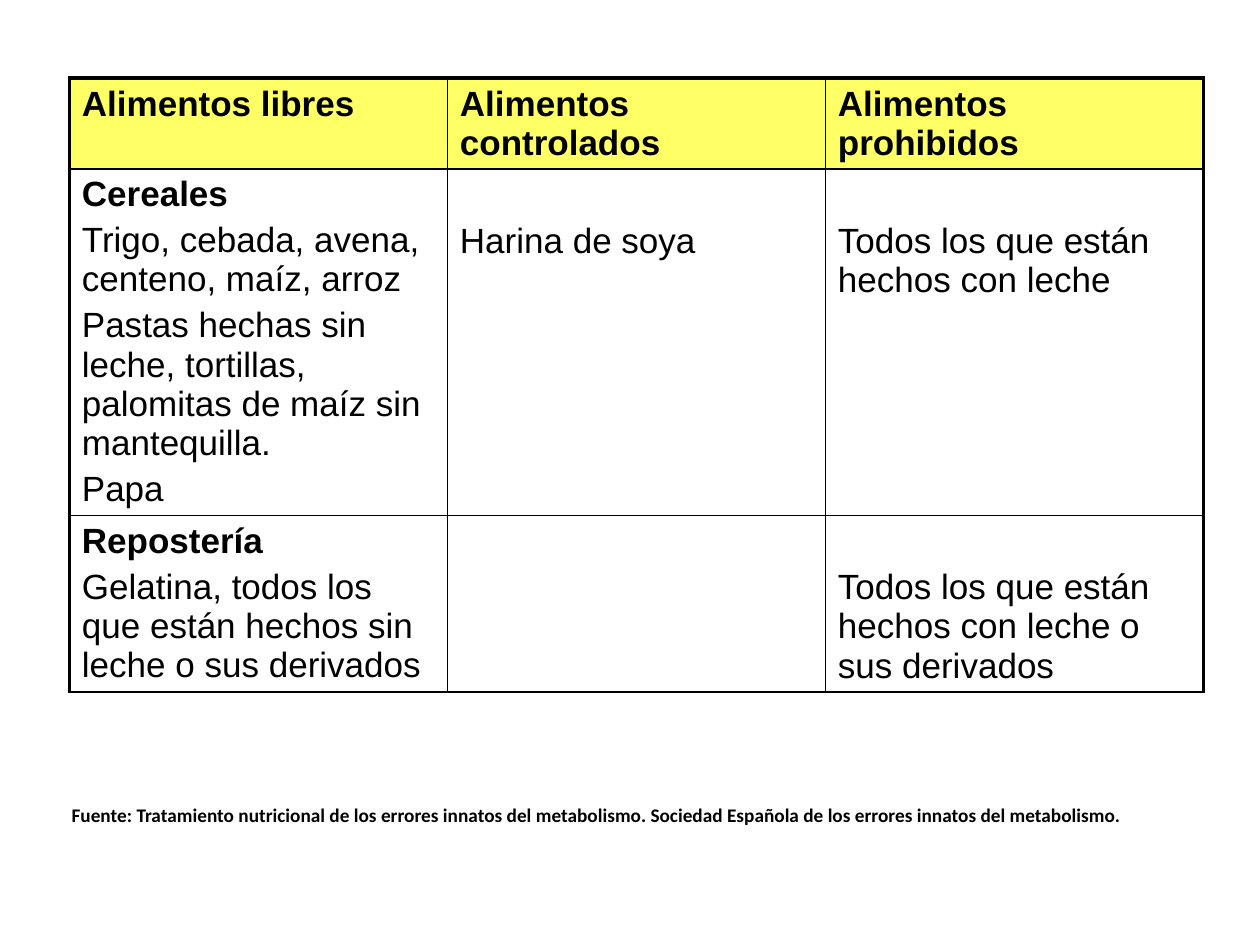
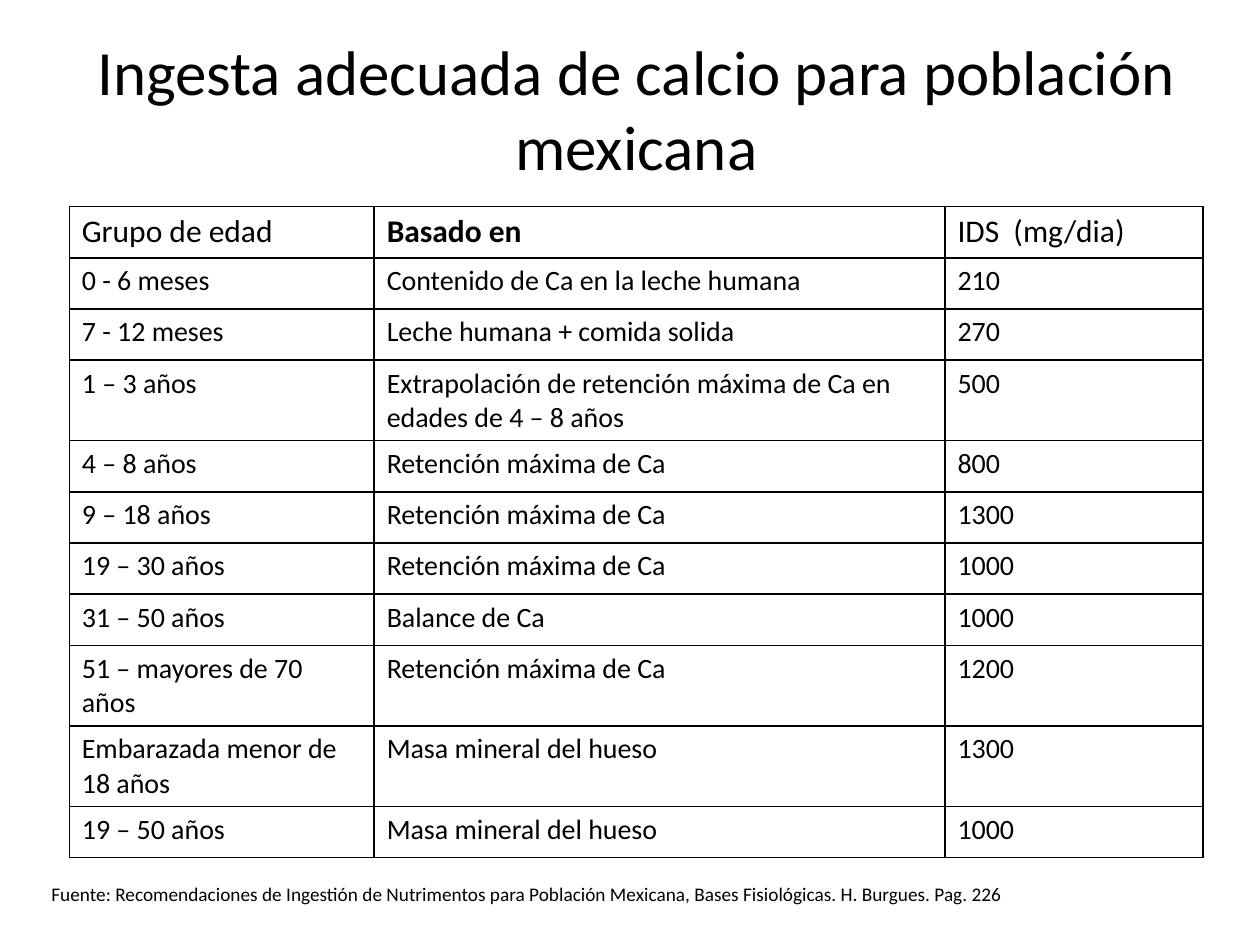
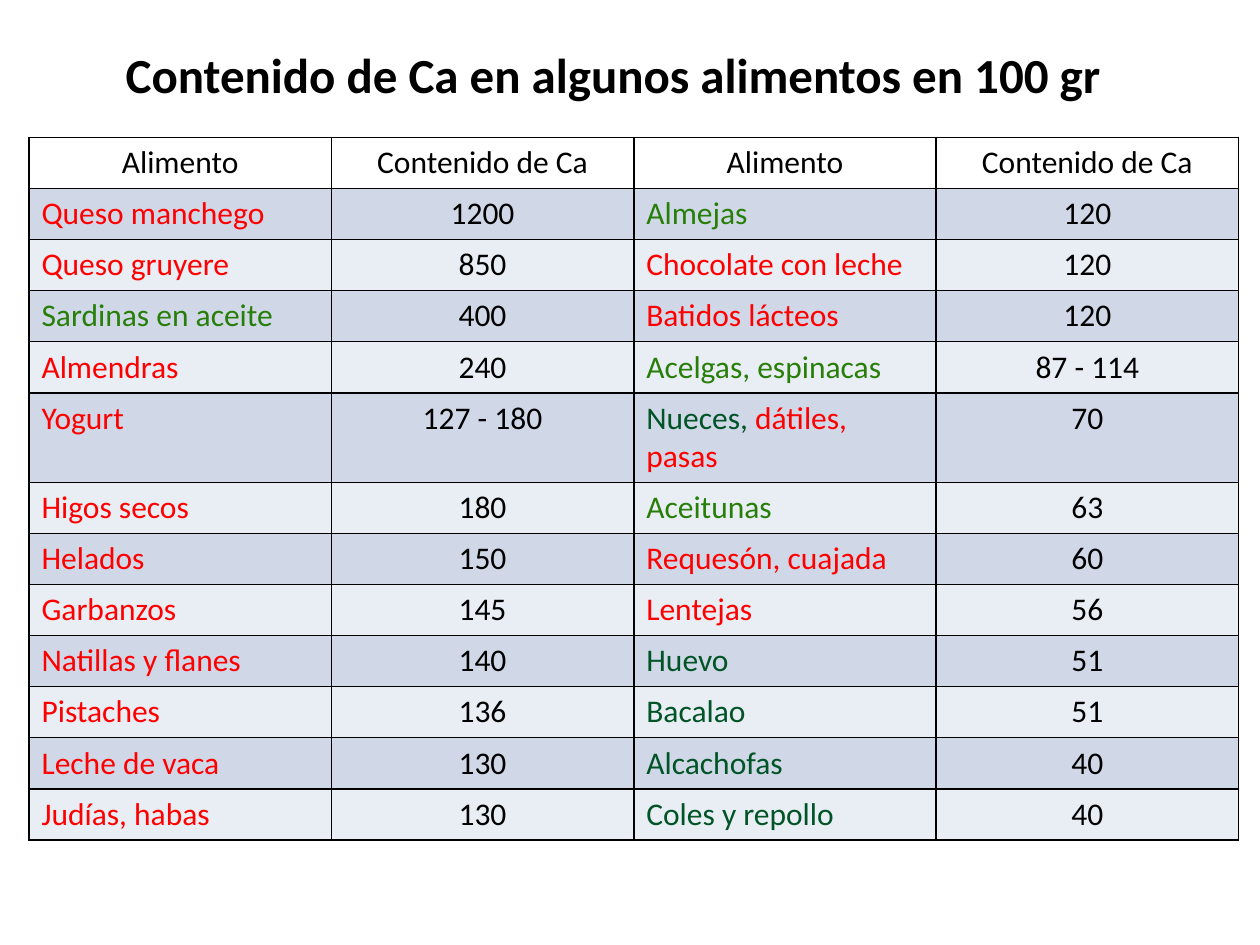
from dataclasses import dataclass, field, replace

from lxml import etree
from pptx import Presentation
from pptx.dml.color import RGBColor
from pptx.enum.text import MSO_ANCHOR, PP_ALIGN
from pptx.oxml.ns import qn
from pptx.util import Inches, Pt

LEFT, CENTER = PP_ALIGN.LEFT, PP_ALIGN.CENTER
TOP, MIDDLE = MSO_ANCHOR.TOP, MSO_ANCHOR.MIDDLE

BLACK = RGBColor(0x00, 0x00, 0x00)
WHITE = RGBColor(0xFF, 0xFF, 0xFF)
YELLOW = RGBColor(0xFF, 0xFF, 0x66)
RED = RGBColor(0xFF, 0x00, 0x00)
GREEN = RGBColor(0x27, 0x7E, 0x08)
DARK_GREEN = RGBColor(0x00, 0x54, 0x26)
BANDS = (RGBColor(0xD0, 0xD8, 0xE8), RGBColor(0xE9, 0xED, 0xF4))

THIN, THICK = Pt(1), Pt(2.25)
PARAGRAPH_GAP = Pt(4)
# Top margin that sets a cell's text level with the line under a category heading
BELOW_HEADING = Inches(0.42)


@dataclass(frozen=True)
class Style:
    size: float
    font: str = "Calibri"
    color: RGBColor = BLACK
    bold: bool = False


@dataclass(frozen=True)
class Span:
    text: str
    style: Style


@dataclass(frozen=True)
class Paragraph:
    spans: tuple[Span, ...]
    alignment: PP_ALIGN = LEFT


@dataclass(frozen=True)
class Cell:
    paragraphs: tuple[Paragraph, ...] = ()
    fill: RGBColor | None = None
    margin_top: int = Inches(0.05)


@dataclass(frozen=True)
class Box:
    left: float
    top: float
    width: float
    height: float

    def lengths(self) -> tuple[int, ...]:
        return tuple(map(Inches, (self.left, self.top, self.width, self.height)))


@dataclass(frozen=True)
class TableLayout:
    box: Box
    columns: tuple[float, ...]
    tall_rows: dict[int, float] = field(default_factory=dict)
    outer_lines: dict[str, int] = field(default_factory=dict)


TITLE = Style(36)
FOOTNOTE = Style(11)
HEADER = Style(18)
FOOD = Style(20, "Arial")
FOOD_BOLD = replace(FOOD, bold=True)
INTAKE = Style(16)


def line(text: str, style: Style, alignment: PP_ALIGN = LEFT) -> Paragraph:
    return Paragraph((Span(text, style),), alignment)


def write(frame, paragraphs: tuple[Paragraph, ...]) -> None:
    for index, content in enumerate(paragraphs):
        paragraph = frame.add_paragraph() if index else frame.paragraphs[0]
        paragraph.alignment = content.alignment
        if index:
            paragraph.space_before = PARAGRAPH_GAP
        for span in content.spans:
            run = paragraph.add_run()
            run.text = span.text
            style = span.style
            formats = {"name": style.font, "size": Pt(style.size), "bold": style.bold}
            for attribute, value in formats.items():
                setattr(run.font, attribute, value)
            run.font.color.rgb = style.color


def add_text(slide, box: Box, paragraph: Paragraph, anchor: MSO_ANCHOR = TOP) -> None:
    frame = slide.shapes.add_textbox(*box.lengths()).text_frame
    frame.word_wrap = True
    frame.vertical_anchor = anchor
    write(frame, (paragraph,))


def set_borders(cell, widths: dict[str, int]) -> None:
    """Put black lines, keyed L, R, T and B, ahead of the cell's fill."""
    properties = cell._tc.get_or_add_tcPr()
    for index, (side, width) in enumerate(widths.items()):
        border = etree.Element(qn(f"a:ln{side}"), w=str(width))
        fill = etree.SubElement(border, qn("a:solidFill"))
        etree.SubElement(fill, qn("a:srgbClr"), val=str(BLACK))
        properties.insert(index, border)


def add_grid(slide, layout: TableLayout, rows: list[list[Cell]]) -> None:
    """Draw a table whose ordinary rows share the height left by the tall ones."""
    last_row, last_column = len(rows) - 1, len(layout.columns) - 1
    table = slide.shapes.add_table(
        len(rows), len(layout.columns), *layout.box.lengths()).table
    table.first_row = table.horz_banding = False
    for column, width in zip(table.columns, layout.columns):
        column.width = Inches(width)
    tall = layout.tall_rows
    ordinary = (layout.box.height - sum(tall.values())) / (len(rows) - len(tall))

    for r, row in enumerate(rows):
        table.rows[r].height = Inches(tall.get(r, ordinary))
        for c, content in enumerate(row):
            cell = table.cell(r, c)
            cell.margin_top = content.margin_top
            if content.fill is None:
                cell.fill.background()
            else:
                cell.fill.solid()
                cell.fill.fore_color.rgb = content.fill
            write(cell.text_frame, content.paragraphs)
            on_edge = {"L": c == 0, "R": c == last_column,
                       "T": r == 0, "B": r == last_row}
            set_borders(cell, {
                side: layout.outer_lines.get(side, THIN) if outer else THIN
                for side, outer in on_edge.items()})


def food_category(name: str, free: list[str], controlled: str,
                  forbidden: str) -> list[Cell]:
    allowed = (line(name, FOOD_BOLD), *(line(text, FOOD) for text in free))
    return [Cell(allowed)] + [
        Cell((line(text, FOOD),), margin_top=BELOW_HEADING) if text else Cell()
        for text in (controlled, forbidden)]


def build_food_groups(slide) -> None:
    headings = ("Alimentos libres", "Alimentos controlados", "Alimentos prohibidos")
    rows = [
        [Cell((line(text, FOOD_BOLD),), YELLOW) for text in headings],
        food_category(
            "Cereales",
            ["Trigo, cebada, avena, centeno, maíz, arroz",
             "Pastas hechas sin leche, tortillas, palomitas de maíz sin mantequilla.",
             "Papa"],
            "Harina de soya",
            "Todos los que están hechos con leche"),
        food_category(
            "Repostería",
            ["Gelatina, todos los que están hechos sin leche o sus derivados"],
            "",
            "Todos los que están hechos con leche o sus derivados"),
    ]
    layout = TableLayout(Box(0.55, 0.62, 9, 4.87), (3, 3, 3), {0: 0.72, 1: 2.75},
                         dict.fromkeys("LRT", THICK))
    add_grid(slide, layout, rows)
    source = ("Fuente: Tratamiento nutricional de los errores innatos del metabolismo. "
              "Sociedad Española de los errores innatos del metabolismo.")
    add_text(slide, Box(0.47, 6.33, 9.14, 0.47),
             line(source, replace(FOOTNOTE, bold=True)))


def build_calcium_intake(slide) -> None:
    add_text(slide, Box(0.55, 0.23, 9, 1.25),
             line("Ingesta adecuada de calcio para población mexicana", TITLE, CENTER),
             MIDDLE)
    headings = (("Grupo de edad", HEADER),
                ("Basado en", replace(HEADER, bold=True)),
                ("IDS  (mg/dia)", HEADER))
    retention, bone_mass = "Retención máxima de Ca", "Masa mineral del hueso"
    intakes = (
        ("0 - 6 meses", "Contenido de Ca en la leche humana", "210"),
        ("7 - 12 meses", "Leche humana + comida solida", "270"),
        ("1 – 3 años",
         "Extrapolación de retención máxima de Ca en edades de 4 – 8 años", "500"),
        ("4 – 8 años", retention, "800"),
        ("9 – 18 años", retention, "1300"),
        ("19 – 30 años", retention, "1000"),
        ("31 – 50 años", "Balance de Ca", "1000"),
        ("51 – mayores de 70 años", retention, "1200"),
        ("Embarazada menor de 18 años", bone_mass, "1300"),
        ("19 – 50 años", bone_mass, "1000"),
    )
    rows = [[Cell((line(text, style),), WHITE) for text, style in headings]]
    rows += [[Cell((line(text, INTAKE),), WHITE) for text in intake]
             for intake in intakes]
    layout = TableLayout(Box(0.55, 1.64, 9, 5.17), (2.42, 4.53, 2.05),
                         dict.fromkeys((3, 8, 9), 0.64))
    add_grid(slide, layout, rows)
    source = ("Fuente: Recomendaciones de Ingestión de Nutrimentos para Población "
              "Mexicana, Bases Fisiológicas. H. Burgues. Pag. 226")
    add_text(slide, Box(0.31, 6.95, 8.83, 0.29), line(source, FOOTNOTE))


def food(*parts: tuple[str, RGBColor]) -> Paragraph:
    return Paragraph(tuple(Span(text, replace(HEADER, color=color))
                           for text, color in parts))


def build_calcium_content(slide) -> None:
    add_text(slide, Box(0.23, 0.3, 9.27, 1.11),
             line("Contenido de Ca en algunos alimentos en 100 gr",
                  replace(TITLE, size=28, bold=True), CENTER))
    richest = (
        (food(("Queso manchego", RED)), "1200"),
        (food(("Queso gruyere", RED)), "850"),
        (food(("Sardinas en aceite", GREEN)), "400"),
        (food(("Almendras", RED)), "240"),
        (food(("Yogurt", RED)), "127 - 180"),
        (food(("Higos secos", RED)), "180"),
        (food(("Helados", RED)), "150"),
        (food(("Garbanzos", RED)), "145"),
        (food(("Natillas y flanes", RED)), "140"),
        (food(("Pistaches", RED)), "136"),
        (food(("Leche de vaca", RED)), "130"),
        (food(("Judías, habas", RED)), "130"),
    )
    others = (
        (food(("Almejas", GREEN)), "120"),
        (food(("Chocolate con leche", RED)), "120"),
        (food(("Batidos lácteos", RED)), "120"),
        (food(("Acelgas, espinacas", GREEN)), "87 - 114"),
        (food(("Nueces, ", DARK_GREEN), ("dátiles, pasas", RED)), "70"),
        (food(("Aceitunas", GREEN)), "63"),
        (food(("Requesón, cuajada", RED)), "60"),
        (food(("Lentejas", RED)), "56"),
        (food(("Huevo", DARK_GREEN)), "51"),
        (food(("Bacalao", DARK_GREEN)), "51"),
        (food(("Alcachofas", DARK_GREEN)), "40"),
        (food(("Coles y repollo", DARK_GREEN)), "40"),
    )
    headings = ("Alimento", "Contenido de Ca") * 2
    rows = [[Cell((line(text, HEADER, CENTER),), WHITE) for text in headings]]
    for index, pair in enumerate(zip(richest, others)):
        band = BANDS[index % 2]
        rows.append([Cell((paragraph,), band)
                     for name, calcium in pair
                     for paragraph in (name, line(calcium, HEADER, CENTER))])
    add_grid(slide, TableLayout(Box(0.23, 1.09, 9.6, 5.58), (2.4,) * 4, {5: 0.71}), rows)


def main() -> None:
    presentation = Presentation()
    presentation.slide_width, presentation.slide_height = Inches(10), Inches(7.5)
    blank = presentation.slide_layouts[6]
    for build in (build_food_groups, build_calcium_intake, build_calcium_content):
        build(presentation.slides.add_slide(blank))
    presentation.save("out.pptx")


if __name__ == "__main__":
    main()
